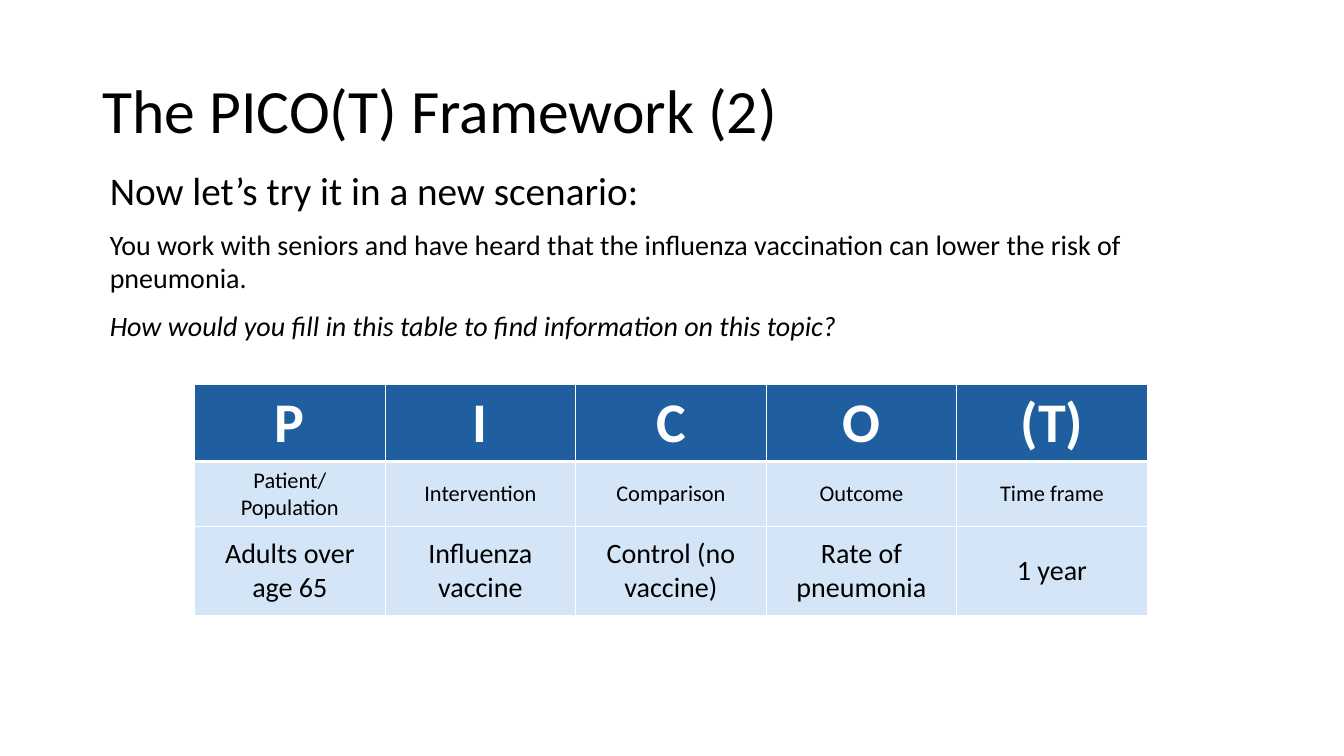
from lxml import etree
from pptx import Presentation
from pptx.dml.color import RGBColor
from pptx.enum import text
from pptx.oxml import ns
from pptx.util import Inches, Pt

FONT = "Calibri"
BLACK = RGBColor(0x00, 0x00, 0x00)
WHITE = RGBColor(0xFF, 0xFF, 0xFF)
HEADER_BLUE = RGBColor(0x1F, 0x5F, 0xA0)
PALE_BLUE = RGBColor(0xD4, 0xE5, 0xF7)

INTRO = [
    ("Now let’s try it in a new scenario:", 28, False),
    ("You work with seniors and have heard that the influenza vaccination "
     "can lower the risk of pneumonia.", 20, False),
    ("How would you fill in this table to find information on this topic?", 20, True),
]

# Each row: height, text size, text colour, fill, bold, labels
PICOT_ROWS = [
    (0.77, 40, WHITE, HEADER_BLUE, True, ["P", "I", "C", "O", "(T)"]),
    (0.64, 16, BLACK, PALE_BLUE, False,
     ["Patient/ Population", "Intervention", "Comparison", "Outcome", "Time frame"]),
    (0.89, 20, BLACK, PALE_BLUE, False,
     ["Adults over age 65", "Influenza vaccine", "Control (no vaccine)",
      "Rate of pneumonia", "1 year"]),
]
COLUMN_WIDTH = 1.89


def set_font(para, size, color, bold=False, italic=False):
    font = para.font
    font.name, font.size = FONT, Pt(size)
    font.bold, font.italic = bold, italic
    font.color.rgb = color


def add_text_box(page, left, top, width, height, anchor):
    box = page.shapes.add_textbox(Inches(left), Inches(top), Inches(width), Inches(height))
    frame = box.text_frame
    frame.word_wrap = True
    frame.vertical_anchor = anchor
    return frame


def add_title(page, title):
    frame = add_text_box(page, 0.92, 0.4, 11.5, 1.45, text.MSO_ANCHOR.MIDDLE)
    para = frame.paragraphs[0]
    para.text = title
    para.line_spacing = 0.9
    set_font(para, 44, BLACK)


def add_intro(page):
    frame = add_text_box(page, 0.99, 1.6, 11.62, 4.76, text.MSO_ANCHOR.TOP)
    for index, (line, size, italic) in enumerate(INTRO):
        para = frame.add_paragraph() if index else frame.paragraphs[0]
        para.text = line
        if index:
            para.space_before = Pt(10)
        set_font(para, size, BLACK, italic=italic)


def set_borders(cell, top, bottom):
    properties = cell._tc.get_or_add_tcPr()
    widths = {"a:lnL": 1, "a:lnR": 1, "a:lnT": top, "a:lnB": bottom}
    for index, (side, width) in enumerate(widths.items()):
        line = etree.Element(ns.qn(side), w=str(Pt(width)))
        fill = etree.SubElement(line, ns.qn("a:solidFill"))
        etree.SubElement(fill, ns.qn("a:srgbClr"), val=str(WHITE))
        properties.insert(index, line)


def add_picot_table(page):
    columns = len(PICOT_ROWS[0][-1])
    height = sum(row[0] for row in PICOT_ROWS)
    table = page.shapes.add_table(
        len(PICOT_ROWS), columns, Inches(1.93), Inches(3.81),
        Inches(COLUMN_WIDTH * columns), Inches(height)).table
    for column in table.columns:
        column.width = Inches(COLUMN_WIDTH)
    for r, (row_height, size, color, fill, bold, labels) in enumerate(PICOT_ROWS):
        table.rows[r].height = Inches(row_height)
        for c, label in enumerate(labels):
            cell = table.cell(r, c)
            cell.fill.solid()
            cell.fill.fore_color.rgb = fill
            cell.vertical_anchor = text.MSO_ANCHOR.MIDDLE
            # A thick rule separates the header from the body
            set_borders(cell, top=3 if r == 1 else 1, bottom=3 if r == 0 else 1)
            para = cell.text_frame.paragraphs[0]
            para.text = label
            para.alignment = text.PP_ALIGN.CENTER
            set_font(para, size, color, bold)


def main():
    deck = Presentation()
    deck.slide_width, deck.slide_height = Inches(13.33), Inches(7.5)
    page = deck.slides.add_slide(deck.slide_layouts[6])
    add_title(page, "The PICO(T) Framework (2)")
    add_intro(page)
    add_picot_table(page)
    deck.save("out.pptx")


if __name__ == "__main__":
    main()
